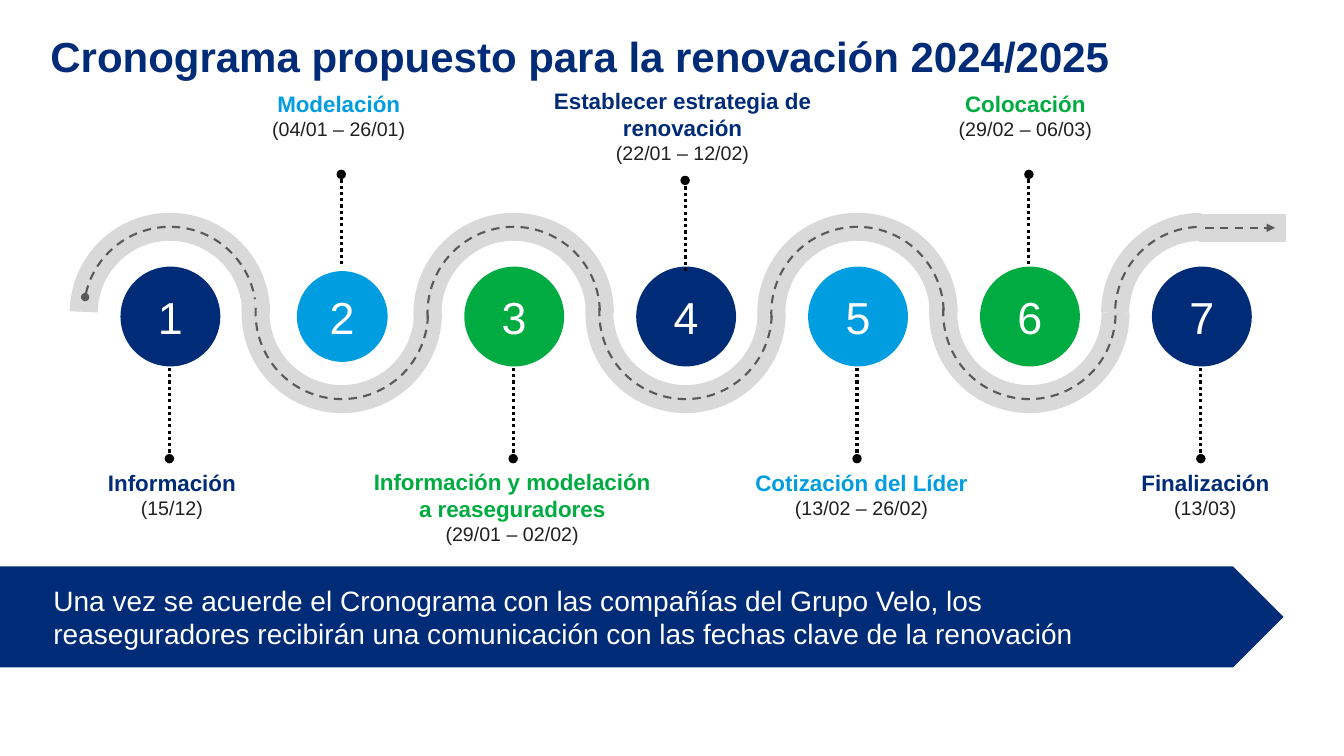
from lxml import etree
from pptx import Presentation
from pptx.dml.color import RGBColor
from pptx.enum.dml import MSO_LINE
from pptx.enum.shapes import MSO_CONNECTOR, MSO_SHAPE
from pptx.enum.text import MSO_ANCHOR, MSO_AUTO_SIZE, PP_ALIGN
from pptx.oxml.ns import qn
from pptx.util import Inches, Pt

ARC, OVAL, ARROW_BANNER = MSO_SHAPE.ARC, MSO_SHAPE.OVAL, MSO_SHAPE.PENTAGON
STRAIGHT = MSO_CONNECTOR.STRAIGHT
DASH, DOTS = MSO_LINE.DASH, MSO_LINE.ROUND_DOT
TOP, MIDDLE = MSO_ANCHOR.TOP, MSO_ANCHOR.MIDDLE
LEFT, CENTER = PP_ALIGN.LEFT, PP_ALIGN.CENTER
FIXED_SIZE = MSO_AUTO_SIZE.NONE

FONT = "Arial"
NAVY, SKY, GREEN = "002C77", "009DE0", "00AC41"
WHITE, BLACK, TEXT = "FFFFFF", "000000", "202020"
ROAD, ROAD_DASH = "D9D9D9", "595959"

PITCH = 1.705      # distance between neighbouring steps
BEND = 1.71        # diameter of a road bend

# name, dates, colour, circle diameter, label (left, top, width, height), stem (from, to)
STEPS = [
    ("Información", "(15/12)", NAVY, 0.99, (0.48, 4.6, 2.45, 0.61), (3.65, 4.55)),
    ("Modelación", "(04/01 – 26/01)", SKY, 0.9, (1.83, 0.84, 3.06, 0.61), (2.62, 1.73)),
    ("Información y modelación a reaseguradores", "(29/01 – 02/02)", GREEN, 0.99,
     (3.57, 4.6, 3.02, 0.87), (3.65, 4.55)),
    ("Establecer estrategia de renovación", "(22/01 – 12/02)", NAVY, 0.99,
     (5.24, 0.82, 3.06, 0.87), (2.69, 1.79)),
    ("Cotización del Líder", "(13/02 – 26/02)", SKY, 0.99, (7.2, 4.6, 2.69, 0.61), (3.65, 4.55)),
    ("Colocación", "(29/02 – 06/03)", GREEN, 0.99, (8.64, 0.84, 3.06, 0.61), (2.62, 1.73)),
    ("Finalización", "(13/03)", NAVY, 0.99, (10.61, 4.6, 2.69, 0.61), (3.65, 4.55)),
]


def color(value):
    return RGBColor.from_string(value)


def inches(*lengths):
    return [Inches(length) for length in lengths]


def style_font(paragraph, size, value, bold=False):
    font = paragraph.font
    font.name, font.size, font.bold = FONT, Pt(size), bold
    font.color.rgb = color(value)


def style_line(shape, value, width, dash=None, end=None, end_type=None):
    line = shape.line
    line.color.rgb = color(value)
    line.width = Pt(width)
    if dash is not None:
        line.dash_style = dash
    if end:
        outline = shape._element.spPr.find(qn("a:ln"))
        etree.SubElement(outline, qn(f"a:{end}"), type=end_type)


def add_line(slide, start, finish, *line_style):
    connector = slide.shapes.add_connector(STRAIGHT, *inches(*start, *finish))
    style_line(connector, *line_style)
    etree.SubElement(connector._element.spPr, qn("a:effectLst"))


def add_filled(slide, kind, box, value):
    shape = slide.shapes.add_shape(kind, *inches(*box))
    shape.shadow.inherit = False
    shape.fill.solid()
    shape.fill.fore_color.rgb = color(value)
    shape.line.fill.background()
    return shape


def add_bend(slide, left, top, angles, flipped, *line_style):
    """Angles are in units of 5/3 degrees, clockwise from the right."""
    bend = slide.shapes.add_shape(ARC, *inches(left, top, BEND, BEND))
    bend.shadow.inherit = False
    bend.fill.background()
    bend.adjustments[0], bend.adjustments[1] = angles
    if flipped:
        bend._element.spPr.find(qn("a:xfrm")).set("flipV", "1")
    style_line(bend, *line_style)


def add_title(slide, box):
    title = slide.shapes.title
    title.left, title.top, title.width, title.height = inches(*box)
    frame = title.text_frame
    frame.text = "Cronograma propuesto para la renovación 2024/2025"
    frame.auto_size, frame.vertical_anchor = FIXED_SIZE, TOP
    frame.margin_left = frame.margin_top = frame.margin_right = frame.margin_bottom = 0
    paragraph = frame.paragraphs[0]
    paragraph.alignment, paragraph.line_spacing = LEFT, 0.8
    style_font(paragraph, 30, NAVY, True)


def add_road(slide, left, top):
    last = len(STEPS) - 1
    half_turn, quarter_turn = (105.96, 0), (108, 162)
    surface, center_line = (ROAD, 20), (ROAD_DASH, 1.5, DASH)
    # Surface first, then the dashed centre line
    surface_ends = {0: (108.44, 0), last: quarter_turn}
    dash_ends = {0: (114.36, 210.48), last: (109.78, 161.11)}
    for line_style, ends in ((surface, surface_ends), (center_line, dash_ends)):
        for index in range(len(STEPS)):
            dot = ("headEnd", "oval") if index == 0 and line_style is center_line else ()
            add_bend(slide, left + index * PITCH, top, ends.get(index, half_turn),
                     index % 2 == 1, *line_style, *dot)
    # Straight exit
    exit_left = left + last * PITCH + BEND / 2
    add_line(slide, (exit_left - 0.02, top + 0.01), (exit_left + 0.84, top + 0.01), *surface)
    add_line(slide, (exit_left + 0.04, top + 0.01), (exit_left + 0.73, top + 0.01),
             *center_line, "tailEnd", "triangle")


def add_step(slide, number, center_x, center_y, step):
    name, dates, value, diameter, label_box, (stem_start, stem_end) = step
    # Numbered circle
    circle = add_filled(slide, OVAL, (center_x - diameter / 2, center_y - diameter / 2,
                                      diameter, diameter), value)
    frame = circle.text_frame
    frame.text = str(number)
    frame.vertical_anchor = MIDDLE
    frame.margin_left = frame.margin_top = frame.margin_right = frame.margin_bottom = 0
    frame.paragraphs[0].alignment = CENTER
    style_font(frame.paragraphs[0], 32, WHITE)
    # Stem
    stem_x = center_x - 0.01
    add_line(slide, (stem_x, stem_start), (stem_x, stem_end), BLACK, 2.25, DOTS,
             "tailEnd", "oval")
    # Label
    frame = slide.shapes.add_textbox(*inches(*label_box)).text_frame
    frame.word_wrap = True
    heading, period = frame.paragraphs[0], frame.add_paragraph()
    heading.text, period.text = name, dates
    heading.alignment = period.alignment = CENTER
    period.space_after = Pt(6)
    style_font(heading, 16, value, True)
    style_font(period, 14, TEXT)


def add_banner(slide, box):
    banner = add_filled(slide, ARROW_BANNER, box, NAVY)
    frame = banner.text_frame
    frame.text = ("Una vez se acuerde el Cronograma con las compañías del Grupo Velo, los "
                  "reaseguradores recibirán una comunicación con las fechas clave de la renovación")
    frame.word_wrap, frame.vertical_anchor = True, MIDDLE
    frame.margin_left, frame.margin_right = inches(0.53, 1.05)
    frame.margin_top = frame.margin_bottom = 0
    frame.paragraphs[0].alignment = LEFT
    style_font(frame.paragraphs[0], 20, WHITE)


def main():
    presentation = Presentation()
    presentation.slide_width, presentation.slide_height = inches(13.33, 7.5)
    slide = presentation.slides.add_slide(presentation.slide_layouts[5])
    add_title(slide, (0.5, 0.4, 12.31, 0.54))
    add_road(slide, 0.83, 2.25)
    for index, step in enumerate(STEPS):
        add_step(slide, index + 1, 1.69 + index * PITCH, 3.14, step)
    add_banner(slide, (0, 5.62, 12.73, 1))
    presentation.save("out.pptx")


if __name__ == "__main__":
    main()
